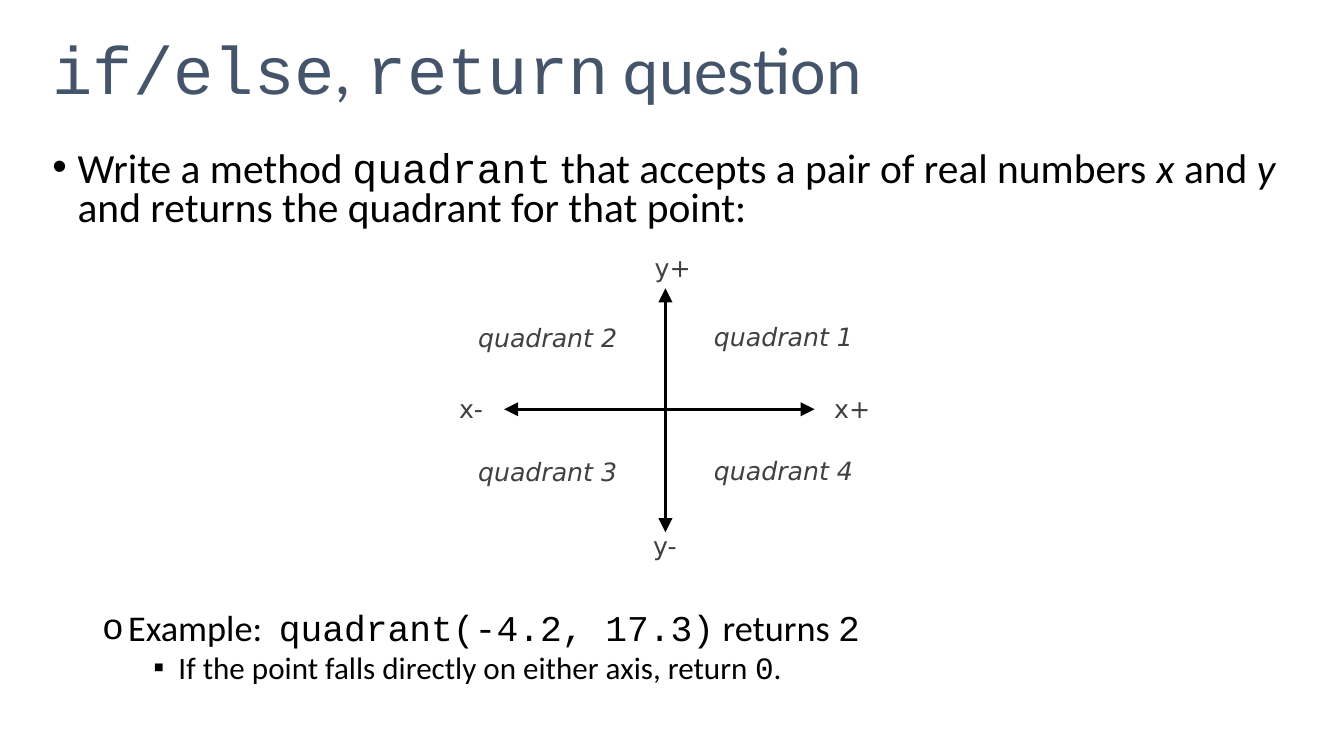
import pptx
import pptx.dml.color
import pptx.enum.shapes
import pptx.enum.text
import pptx.oxml.ns
import pptx.util
from lxml import etree

Inches = pptx.util.Inches
Pt = pptx.util.Pt
PP_ALIGN = pptx.enum.text.PP_ALIGN
ANCHOR = pptx.enum.text.MSO_ANCHOR
AUTO_SIZE = pptx.enum.text.MSO_AUTO_SIZE

COLORS = {"title": "44546A", "body": "000000", "label": "404040", "axis": "000000"}
SANS, CODE, LABEL = "Calibri", "Courier New", "DejaVu Sans"


def add_span(para, text, font=SANS, size=18, color="body", italic=False):
    span = para.add_run()
    span.text = text
    span.font.name = font
    span.font.size = Pt(size)
    span.font.italic = italic
    span.font.color.rgb = pptx.dml.color.RGBColor.from_string(COLORS[color])


def add_child(parent, tag, **attributes):
    return etree.SubElement(parent, pptx.oxml.ns.qn(tag), **attributes)


class SlideBuilder:
    def __init__(self, deck):
        self.page = deck.slides.add_slide(deck.slide_layouts[1])

    def place(self, box, left, top, width, height):
        box.left, box.top = Inches(left), Inches(top)
        box.width, box.height = Inches(width), Inches(height)

    def title(self, spans):
        box = self.page.shapes.title
        self.place(box, 0.42, 0, 12.5, 1.45)
        frame = box.text_frame
        frame.auto_size = AUTO_SIZE.NONE
        frame.vertical_anchor = ANCHOR.MIDDLE
        para = frame.paragraphs[0]
        para.alignment = PP_ALIGN.LEFT
        para.line_spacing = 0.9
        for text, style in spans:
            add_span(para, text, size=48, color="title", **style)

    def body(self, items):
        box = self.page.placeholders[1]
        self.place(box, 0.42, 1.45, 12.5, 5.66)
        frame = box.text_frame
        frame.auto_size = AUTO_SIZE.NONE
        frame.vertical_anchor = ANCHOR.TOP
        for level, (bullet, size, gap, spans) in enumerate(items):
            para = frame.paragraphs[0] if level == 0 else frame.add_paragraph()
            para.level = level
            para.line_spacing = 0.8
            para.space_before = Pt(gap)
            properties = para._p.get_or_add_pPr()
            properties.set("marL", str(Inches(0.25 + 0.5 * level)))
            properties.set("indent", str(-Inches(0.25)))
            add_child(properties, "a:buFont", typeface="Arial")
            add_child(properties, "a:buChar", char=bullet)
            for text, style in spans:
                add_span(para, text, size=size, **style)

    def axis(self, start, end):
        line = self.page.shapes.add_connector(
            pptx.enum.shapes.MSO_CONNECTOR.STRAIGHT,
            *(Inches(value) for value in start + end))
        line.line.width = Pt(2)
        line.line.color.rgb = pptx.dml.color.RGBColor.from_string(COLORS["axis"])
        outline = line.line._get_or_add_ln()
        for tag in ("a:headEnd", "a:tailEnd"):
            add_child(outline, tag, type="triangle", w="lg", len="lg")
        add_child(line._element.spPr, "a:effectLst")

    def label(self, text, left, top, width, italic=False):
        box = self.page.shapes.add_textbox(
            Inches(left), Inches(top), Inches(width), Inches(0.4))
        frame = box.text_frame
        frame.word_wrap = False
        frame.auto_size = AUTO_SIZE.SHAPE_TO_FIT_TEXT
        para = frame.paragraphs[0]
        para.alignment = PP_ALIGN.RIGHT
        para.space_before = Pt(5)
        add_span(para, text, font=LABEL, color="label", italic=italic)


def main():
    deck = pptx.Presentation()
    deck.slide_width, deck.slide_height = Inches(13.33), Inches(7.5)
    builder = SlideBuilder(deck)
    code, italic, plain = {"font": CODE}, {"italic": True}, {}

    builder.title([("if/else", code), (", ", plain),
                   ("return", code), (" question", plain)])
    builder.body([
        ("•", 29.6, 10, [
            ("Write a method ", plain), ("quadrant", code),
            (" that accepts a pair of real numbers ", plain),
            ("x", italic), (" and ", plain), ("y", italic),
            (" and returns the quadrant for that point:", plain)]),
        ("o", 25.9, 273.5, [
            ("Example:  ", plain), ("quadrant(-4.2, 17.3)", code),
            (" returns ", plain), ("2", code)]),
        ("▪", 22.2, 5, [
            ("If the point falls directly on either axis, return ", plain),
            ("0", code), (".", plain)]),
    ])

    builder.axis((6.6, 2.86), (6.6, 5.28))
    builder.axis((5, 4.06), (8.08, 4.06))
    for text, left, top, width in (("x+", 8.17, 3.85, 0.56), ("x-", 4.43, 3.85, 0.46),
                                   ("y+", 6.39, 2.45, 0.56), ("y-", 6.35, 5.21, 0.46)):
        builder.label(text, left, top, width)
    quadrants = ((6.98, 3.14), (4.64, 3.15), (4.64, 4.48), (6.98, 4.47))
    for number, (left, top) in enumerate(quadrants, 1):
        builder.label(f"quadrant {number}", left, top, 1.58, italic=True)

    deck.save("out.pptx")


if __name__ == "__main__":
    main()
